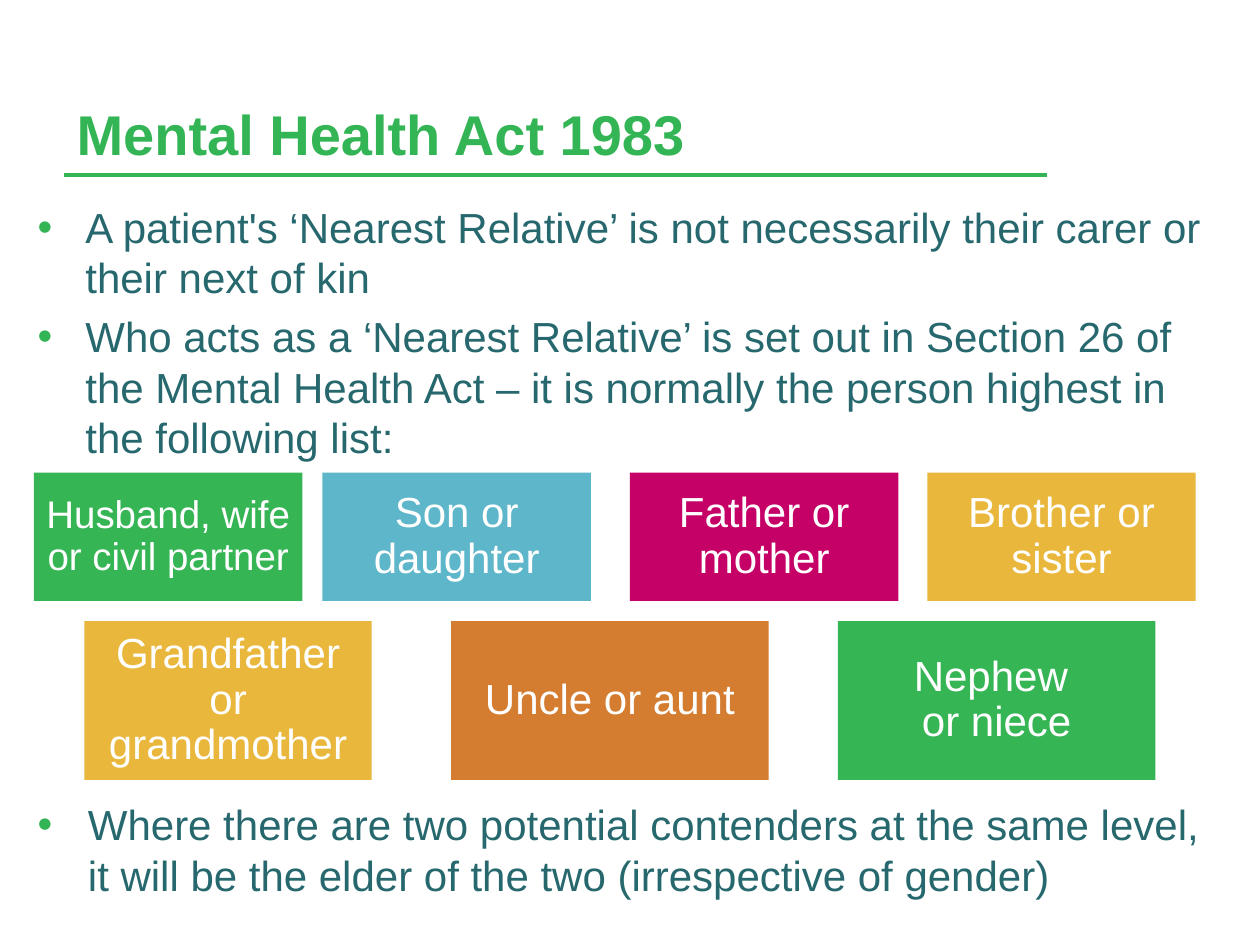
from lxml import etree
from pptx import Presentation
from pptx.dml.color import RGBColor
from pptx.enum.shapes import MSO_CONNECTOR, MSO_SHAPE
from pptx.enum.text import MSO_ANCHOR, PP_ALIGN
from pptx.oxml.ns import qn
from pptx.util import Inches, Pt

STRAIGHT = MSO_CONNECTOR.STRAIGHT
RECTANGLE = MSO_SHAPE.RECTANGLE
BOTTOM, MIDDLE = MSO_ANCHOR.BOTTOM, MSO_ANCHOR.MIDDLE
CENTER = PP_ALIGN.CENTER

FONT = "Arial"
GREEN = RGBColor(0x34, 0xB5, 0x55)
LEAF = RGBColor(0x36, 0xB5, 0x55)
TEAL = RGBColor(0x26, 0x68, 0x6D)
BLUE = RGBColor(0x5D, 0xB6, 0xC9)
MAGENTA = RGBColor(0xC5, 0x00, 0x67)
GOLD = RGBColor(0xE9, 0xB7, 0x3C)
ORANGE = RGBColor(0xD4, 0x7C, 0x30)
WHITE = RGBColor(0xFF, 0xFF, 0xFF)

SLIDE_WIDTH, SLIDE_HEIGHT = Inches(10), Inches(7.5)
COLUMNS, ROWS = 100, 75

RULES = [
    "A patient's ‘Nearest Relative’ is not necessarily their carer or their next of kin",
    "Who acts as a ‘Nearest Relative’ is set out in Section 26 of the Mental Health Act "
    "– it is normally the person highest in the following list:",
]
TIE_BREAK = [
    "Where there are two potential contenders at the same level, \n"
    "it will be the elder of the two (irrespective of gender)"
]
CLOSE_RELATIVES = [
    ("Husband, wife or civil partner", 2.7, 21.3, LEAF, 22),
    ("Son or daughter", 25.6, 21.3, BLUE, 24),
    ("Father or mother", 50, 21.3, MAGENTA, 24),
    ("Brother or sister", 73.6, 21.3, GOLD, 24),
]
WIDER_RELATIVES = [
    ("Grandfather or grandmother", 6.7, 22.8, GOLD, 24),
    ("Uncle or aunt", 35.8, 25.2, ORANGE, 24),
    ("Nephew \nor niece", 66.5, 25.2, LEAF, 24),
]


def across(columns):
    return round(SLIDE_WIDTH * columns / COLUMNS)


def down(rows):
    return round(SLIDE_HEIGHT * rows / ROWS)


def area(left, top, width, height):
    return across(left), down(top), across(width), down(height)


def style(paragraph, size, color, bold=False):
    font = paragraph.font
    font.name, font.size, font.bold = FONT, Pt(size), bold
    font.color.rgb = color


def add_bullet(paragraph, margin, hanging):
    properties = paragraph._p.get_or_add_pPr()
    properties.set("marL", str(across(margin)))
    properties.set("indent", str(-across(hanging)))
    bullet_color = etree.SubElement(properties, qn("a:buClr"))
    etree.SubElement(bullet_color, qn("a:srgbClr"), val=str(GREEN))
    etree.SubElement(properties, qn("a:buFont"), typeface=FONT)
    etree.SubElement(properties, qn("a:buChar"), char="•")


def add_heading(slide, wording):
    frame = slide.shapes.add_textbox(*area(5.1, 2.8, 78, 10.9)).text_frame
    frame.word_wrap = True
    frame.vertical_anchor = BOTTOM
    heading = frame.paragraphs[0]
    heading.text = wording
    style(heading, 32, GREEN, bold=True)

    underline = slide.shapes.add_connector(
        STRAIGHT, across(5.1), down(13.9), across(83.1), down(13.9))
    underline.line.color.rgb = GREEN
    underline.line.width = Pt(2)
    etree.SubElement(underline._element.spPr, qn("a:effectLst"))


def add_bullets(slide, place, statements, margin, hanging):
    frame = slide.shapes.add_textbox(*area(*place)).text_frame
    frame.word_wrap = True
    for index, statement in enumerate(statements):
        bullet = frame.add_paragraph() if index else frame.paragraphs[0]
        bullet.text = statement
        add_bullet(bullet, margin, hanging)
        if index:
            bullet.space_before = Pt(4.8)
        style(bullet, 24, TEAL)


def add_relatives(slide, relatives, top, height):
    for wording, left, width, color, size in relatives:
        card = slide.shapes.add_shape(RECTANGLE, *area(left, top, width, height))
        card.shadow.inherit = False
        card.fill.solid()
        card.fill.fore_color.rgb = color
        card.line.fill.background()
        frame = card.text_frame
        frame.word_wrap = True
        frame.vertical_anchor = MIDDLE
        frame.margin_left = frame.margin_right = across(1)
        frame.margin_top = frame.margin_bottom = down(1)
        relative = frame.paragraphs[0]
        relative.text = wording
        relative.alignment = CENTER
        relative.line_spacing = 0.9
        style(relative, size, WHITE)


def main():
    deck = Presentation()
    deck.slide_width, deck.slide_height = SLIDE_WIDTH, SLIDE_HEIGHT
    slide = deck.slides.add_slide(deck.slide_layouts[6])
    add_heading(slide, "Mental Health Act 1983")
    add_bullets(slide, (2, 15.5, 95.3, 20.5), RULES, 3.8, 3.8)
    add_bullets(slide, (0, 62.9, 100, 12.1), TIE_BREAK, 6, 4)
    add_relatives(slide, CLOSE_RELATIVES, 37.5, 10.2)
    add_relatives(slide, WIDER_RELATIVES, 49.3, 12.6)
    deck.save("out.pptx")


if __name__ == "__main__":
    main()
